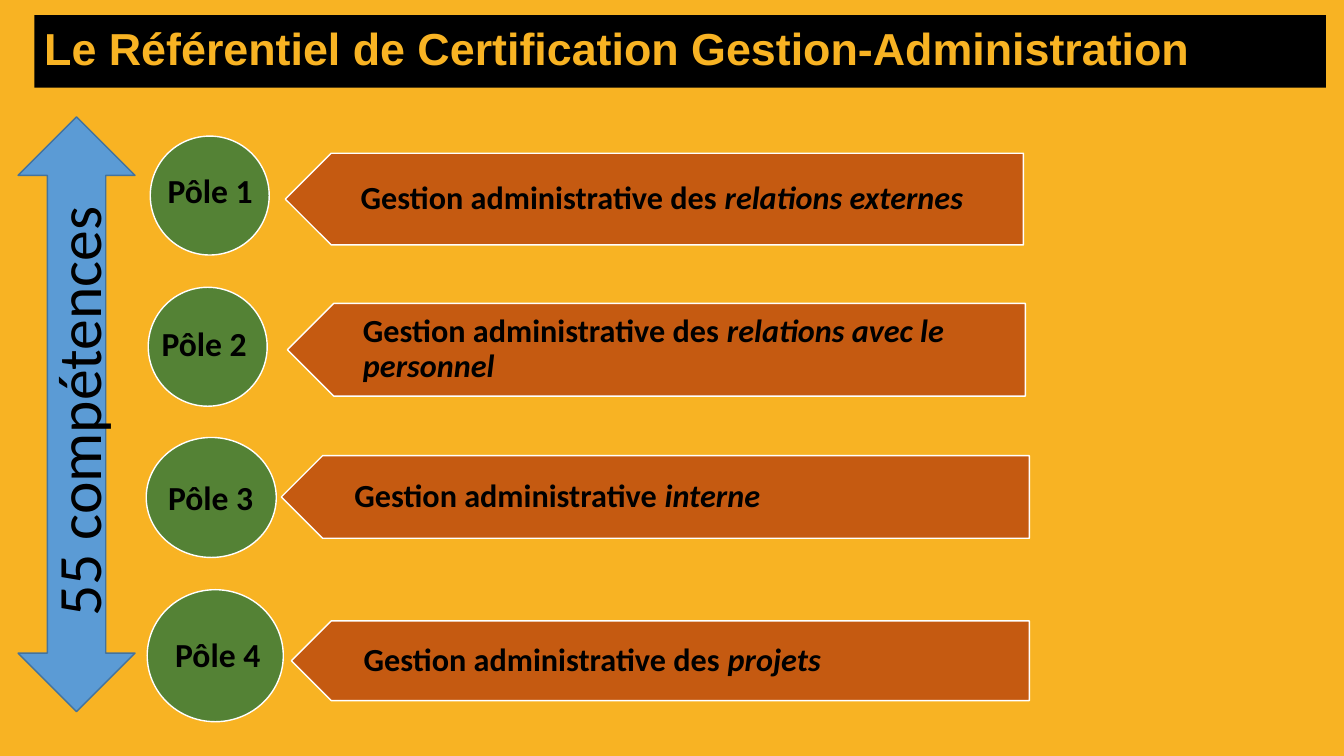
from pptx import Presentation
from pptx.dml.color import RGBColor
from pptx.enum.shapes import MSO_SHAPE
from pptx.enum.text import MSO_ANCHOR, PP_ALIGN
from pptx.util import Inches, Pt

RECTANGLE = MSO_SHAPE.RECTANGLE
PENTAGON = MSO_SHAPE.PENTAGON
OVAL = MSO_SHAPE.OVAL
DOUBLE_ARROW = MSO_SHAPE.UP_DOWN_ARROW
MIDDLE = MSO_ANCHOR.MIDDLE
TOP = MSO_ANCHOR.TOP
LEFT = PP_ALIGN.LEFT
CENTER = PP_ALIGN.CENTER

AMBER = "F8B323"
BLACK = "000000"
WHITE = "FFFFFF"
RUST = "C55A11"
GREEN = "548235"
BLUE = "5B9BD5"
DARK_BLUE = "43739E"

POLES = [
    ("Pôle 1", "Gestion administrative des ", "relations externes",
     (2.83, 1.52, 7.32, 0.91), (1.49, 1.35, 1.18, 1.18), (1.4, 1.64, 1.37, 0.5)),
    ("Pôle 2", "Gestion administrative des ", "relations avec le personnel",
     (2.85, 3.01, 7.32, 0.92), (1.47, 2.85, 1.18, 1.18), (1.34, 3.15, 1.37, 0.5)),
    ("Pôle 3", "Gestion administrative ", "interne",
     (2.79, 4.52, 7.42, 0.82), (1.45, 4.34, 1.29, 1.19), (1.51, 4.68, 1.16, 0.5)),
    ("Pôle 4", "Gestion administrative des ", "projets",
     (2.89, 6.16, 7.32, 0.79), (1.46, 5.85, 1.35, 1.31), (1.53, 6.24, 1.26, 0.5)),
]


def color(value):
    return RGBColor.from_string(value)


def inches(box):
    return [Inches(length) for length in box]


def add_block(slide, kind, box, fill, line=None):
    shape = slide.shapes.add_shape(kind, *inches(box))
    shape.shadow.inherit = False
    shape.fill.solid()
    shape.fill.fore_color.rgb = color(fill)
    if line:
        shape.line.color.rgb = color(line)
        shape.line.width = Pt(1)
    else:
        shape.line.fill.background()
    return shape


def write(shape, text, italic_text="", size=24, font="Calibri", ink=BLACK, bold=True,
          align=LEFT, anchor=MIDDLE, spacing=1.0, insets=(0.1, 0.05, 0.1, 0.05)):
    frame = shape.text_frame
    frame.word_wrap = True
    frame.vertical_anchor = anchor
    (frame.margin_left, frame.margin_top,
     frame.margin_right, frame.margin_bottom) = inches(insets)
    paragraph = frame.paragraphs[0]
    paragraph.alignment = align
    paragraph.line_spacing = spacing
    for part, italic in ((text, False), (italic_text, True)):
        if part:
            run = paragraph.add_run()
            run.text = part
            run.font.size = Pt(size)
            run.font.name = font
            run.font.bold = bold
            run.font.italic = italic
            run.font.color.rgb = color(ink)


def add_title(slide, box):
    bar = add_block(slide, RECTANGLE, box, BLACK)
    write(bar, "Le Référentiel de Certification Gestion-Administration",
          size=32, font="Arial", ink=AMBER, spacing=0.9)


def add_skills_arrow(slide, box):
    arrow = add_block(slide, DOUBLE_ARROW, box, BLUE, DARK_BLUE)
    write(arrow, "55 compétences", size=44, bold=False, align=CENTER,
          insets=(0.1, 0.05, 0.1, 0.15))
    arrow.text_frame._txBody.bodyPr.set("vert", "vert270")


def add_pole(slide, name, text, italic_text, banner_box, circle_box, name_box):
    banner = add_block(slide, PENTAGON, banner_box, RUST, WHITE)
    banner.rotation = 180
    left, top, width, height = banner_box
    indent = height / 4
    label = slide.shapes.add_textbox(*inches((left + indent, top, width - indent, height)))
    write(label, text, italic_text, size=23, spacing=0.9, insets=(0.52, 0.1, 0.18, 0.1))
    add_block(slide, OVAL, circle_box, GREEN, WHITE)
    caption = slide.shapes.add_textbox(*inches(name_box))
    write(caption, name, align=CENTER, anchor=TOP)


def main():
    presentation = Presentation()
    presentation.slide_width = Inches(13.33)
    presentation.slide_height = Inches(7.5)
    slide = presentation.slides.add_slide(presentation.slide_layouts[6])
    slide.background.fill.solid()
    slide.background.fill.fore_color.rgb = color(AMBER)
    add_title(slide, (0.34, 0.15, 12.81, 0.72))
    add_skills_arrow(slide, (0.18, 1.16, 1.16, 5.9))
    for pole in POLES:
        add_pole(slide, *pole)
    presentation.save("out.pptx")


if __name__ == "__main__":
    main()
